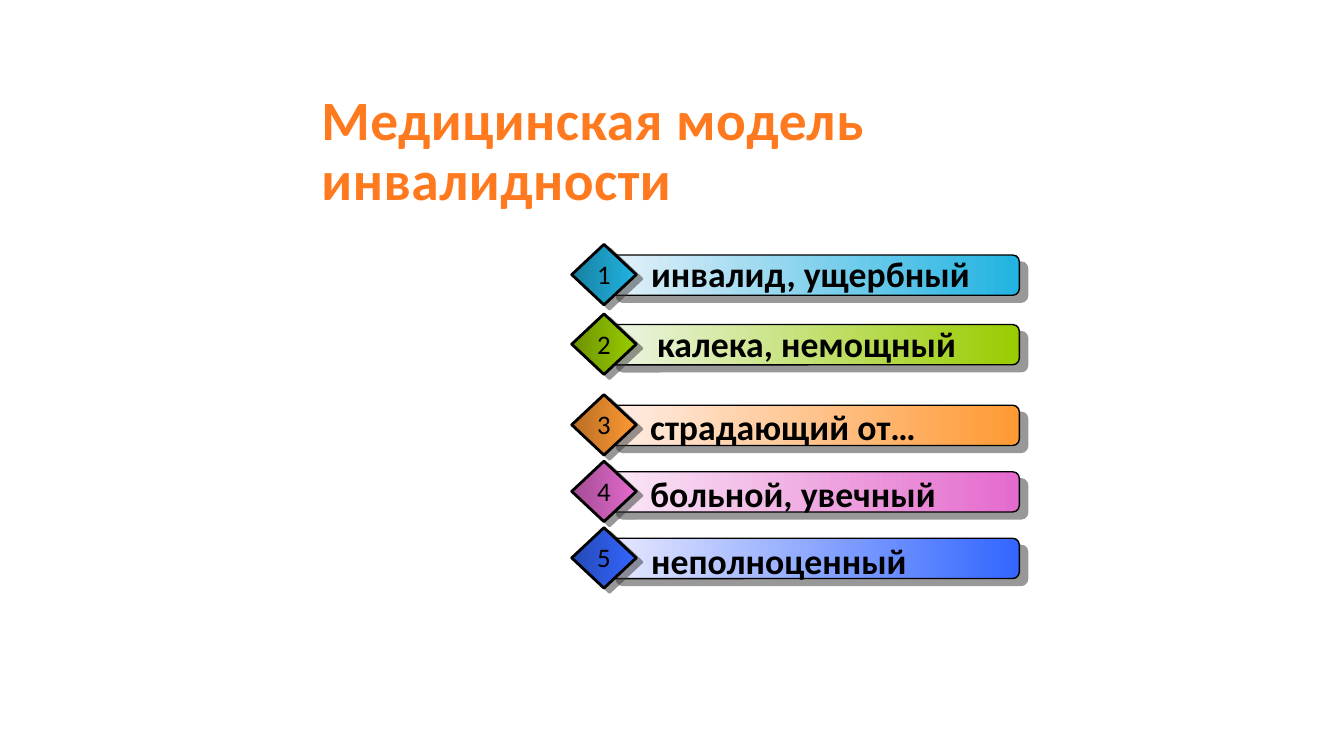
from dataclasses import dataclass

from lxml import etree
from pptx import Presentation, util as u
from pptx.dml.color import RGBColor
from pptx.enum import shapes, text
from pptx.oxml.ns import qn

FONT = "Calibri"
BLACK = "000000"
COLUMN = u.Inches(13.33) / 100
ROW = u.Inches(7.5) / 100


@dataclass(frozen=True)
class Area:
    left: float
    top: float
    width: float
    height: float

    def lengths(self) -> list[u.Emu]:
        units = (COLUMN, ROW, COLUMN, ROW)
        shares = (self.left, self.top, self.width, self.height)
        return [u.Emu(round(share * unit)) for share, unit in zip(shares, units)]


@dataclass(frozen=True)
class Trait:
    label: str
    top: float
    pale: str
    dark: str
    bright: str
    label_left: float
    label_rise: float


TRAITS = (
    Trait("инвалид, ущербный", 33.73, "E6F1F9", "1880A1", "21B3E1", 47.71, 1.07),
    Trait("калека, немощный", 42.93, "EEF5E6", "6D9200", "99CC00", 48.16, 1.07),
    Trait("страдающий от…", 53.6, "FFEEE7", "B66D24", "FF9933", 47.64, 0.67),
    Trait("больной, увечный", 62.4, "FAE9F6", "A34C93", "E46ACD", 47.64, 0.67),
    Trait("неполноценный", 71.2, "E7E9FF", "2449B6", "3366FF", 47.71, 0.53),
)


def colour(value: str) -> RGBColor:
    return RGBColor.from_string(value)


def add_text(parent, area: Area, words: str, size: float, tint: str = BLACK,
             bold: bool = False):
    box = parent.add_textbox(*area.lengths())
    box.text_frame.word_wrap = True
    para = box.text_frame.paragraphs[0]
    para.text = words
    para.font.name = FONT
    para.font.size = u.Pt(size)
    para.font.bold = bold
    para.font.color.rgb = colour(tint)
    return box


def add_shadow(shape, distance: float, angle: int) -> None:
    shape.shadow.inherit = False
    effects = shape._element.spPr.find(qn("a:effectLst"))
    shadow = etree.SubElement(effects, qn("a:outerShdw"), dist=str(u.Pt(distance)),
                              dir=str(angle * 60000), algn="ctr", rotWithShape="0")
    tint = etree.SubElement(shadow, qn("a:srgbClr"), val="333333")
    etree.SubElement(tint, qn("a:alpha"), val="50000")


def add_gradient_shape(parent, kind, area: Area, start: str, end: str,
                       line_width: float, distance: float, angle: int) -> None:
    shape = parent.add_shape(kind, *area.lengths())
    shape.fill.gradient()
    shape.fill.gradient_angle = 0
    for stop, tint in zip(shape.fill.gradient_stops, (start, end)):
        stop.color.rgb = colour(tint)
    shape.line.color.rgb = colour(BLACK)
    shape.line.width = u.Pt(line_width)
    add_shadow(shape, distance, angle)


def add_title(page) -> None:
    box = add_text(page.shapes, Area(23.18, 12.4, 53.71, 15.47),
                   "Медицинская модель инвалидности", 39.6, "FF7A1F", True)
    box.text_frame.vertical_anchor = text.MSO_ANCHOR.MIDDLE
    para = box.text_frame.paragraphs[0]
    para.line_spacing = 0.9
    para.runs[0]._r.get_or_add_rPr().set("spc", "40")


def add_trait(page, number: int, trait: Trait) -> None:
    group = page.shapes.add_group_shape().shapes
    add_gradient_shape(group, shapes.MSO_SHAPE.ROUNDED_RECTANGLE,
                       Area(45.24, trait.top, 30.61, 5.33),
                       trait.pale, trait.bright, 1, 7.8, 40)
    add_gradient_shape(group, shapes.MSO_SHAPE.DIAMOND,
                       Area(42.54, trait.top - 1.4, 4.8, 8),
                       trait.dark, trait.bright, 2, 5, 37)
    label_area = Area(trait.label_left, trait.top - trait.label_rise, 25.5, 7.07)
    add_text(group, label_area, trait.label, 25.5, bold=True)
    digit = add_text(group, Area(43.66, trait.top - 0.27, 2.55, 5.6), str(number), 19.1)
    digit.text_frame.word_wrap = False
    digit.text_frame.paragraphs[0].alignment = text.PP_ALIGN.CENTER


def main() -> None:
    deck = Presentation()
    deck.slide_width = u.Inches(13.33)
    deck.slide_height = u.Inches(7.5)
    page = deck.slides.add_slide(deck.slide_layouts[6])
    add_title(page)
    for number, trait in enumerate(TRAITS, 1):
        add_trait(page, number, trait)
    deck.save("out.pptx")


if __name__ == "__main__":
    main()
